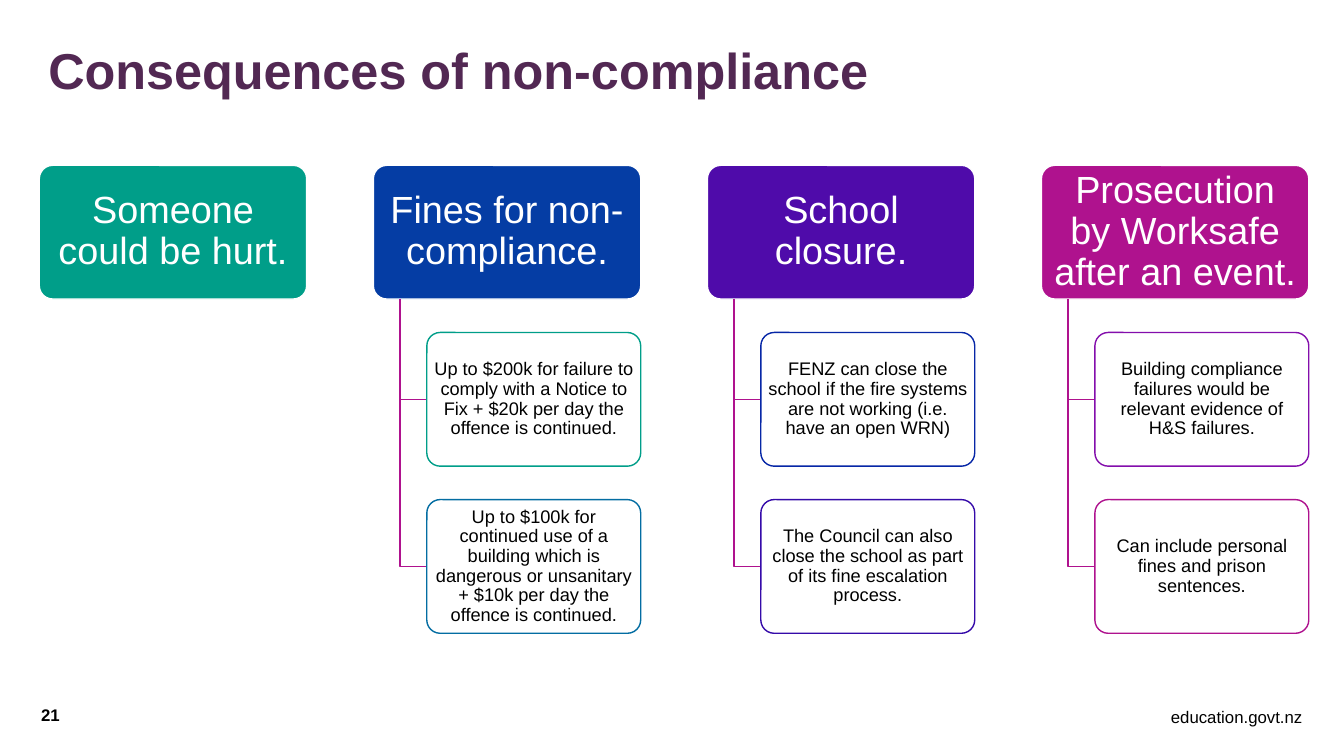
"""Build the slide on the consequences of non-compliance."""
from lxml.etree import SubElement
from pptx import Presentation
from pptx.dml.color import RGBColor
from pptx.enum.shapes import MSO_SHAPE
from pptx.enum.text import MSO_ANCHOR, PP_ALIGN
from pptx.oxml.ns import qn
from pptx.util import Pt

TITLE = "Consequences of non-compliance"
NUMBER = "21"
SITE = "education.govt.nz"
GROUPS = [
    ("Someone could be hurt.", "009E89", []),
    ("Fines for non-compliance.", "053DA4", [
        ("Up to $200k for failure to comply with a Notice to Fix + $20k per day "
         "the offence is continued.", "009E89"),
        ("Up to $100k for continued use of a building which is dangerous or "
         "unsanitary + $10k per day the offence is continued.", "036DA2"),
    ]),
    ("School closure.", "4F0BAA", [
        ("FENZ can close the school if the fire systems are not working "
         "(i.e. have an open WRN)", "0626A6"),
        ("The Council can also close the school as part of its fine escalation "
         "process.", "350AA9"),
    ]),
    ("Prosecution by Worksafe after an event.", "AF128E", [
        ("Building compliance failures would be relevant evidence of H&S "
         "failures.", "830EAC"),
        ("Can include personal fines and prison sentences.", "AF128E"),
    ]),
]
THEME = {
    "font": "Arial", "title": "522853", "ink": "000000", "paper": "FFFFFF",
    "branch": "AF128E", "title_size": 36, "head_size": 27, "item_size": 13,
    "foot_size": 12,
}
LEFT, TOP, PITCH = 28.1, 118.1, 238.6
WIDE, HIGH = 191, 95.5
INDENT, TRUNK, STEP = WIDE / 5, WIDE / 10, HIGH * 1.25


def write(shape, text, size, color, align, bold=False, gap=0.9):
    frame = shape.text_frame
    frame.text = text
    frame.word_wrap = True
    frame.vertical_anchor = MSO_ANCHOR.MIDDLE
    line = frame.paragraphs[0]
    line.alignment, line.line_spacing = align, gap
    font = line.runs[0].font
    font.name, font.size, font.bold = THEME["font"], Pt(size), bold
    font.color.rgb = RGBColor.from_string(color)


def label(slide, box, *style, **more):
    write(slide.shapes.add_textbox(*map(Pt, box)), *style, **more)


def card(slide, x, y, wide, text, fill, edge, size, color, pad):
    shape = slide.shapes.add_shape(
        MSO_SHAPE.ROUNDED_RECTANGLE, Pt(x), Pt(y), Pt(wide), Pt(HIGH))
    shape.adjustments[0] = 0.1
    shape.shadow.inherit = False
    shape.fill.solid()
    shape.fill.fore_color.rgb = RGBColor.from_string(fill)
    shape.line.color.rgb = RGBColor.from_string(edge)
    shape.line.width = Pt(1)
    frame = shape.text_frame
    frame.margin_left = frame.margin_right = Pt(pad * 1.5)
    frame.margin_top = frame.margin_bottom = Pt(pad)
    write(shape, text, size, color, PP_ALIGN.CENTER)
    return shape


def branch(slide, x, y, end_x, end_y):
    path = slide.shapes.build_freeform(Pt(x), Pt(y))
    path.add_line_segments(
        [(Pt(x), Pt(end_y)), (Pt(end_x), Pt(end_y))], close=False)
    shape = path.convert_to_shape()
    shape.shadow.inherit = False
    shape.fill.background()
    shape.line.color.rgb = RGBColor.from_string(THEME["branch"])
    shape.line.width = Pt(1)


def main():
    deck = Presentation()
    deck.slide_width, deck.slide_height = Pt(960), Pt(540)
    slide = deck.slides.add_slide(deck.slide_layouts[6])
    ink, foot = THEME["ink"], THEME["foot_size"]
    label(slide, (719.3, 501.1, 218.2, 21.6), SITE, foot, ink,
          PP_ALIGN.RIGHT, gap=1.0)
    label(slide, (27.4, 23.8, 792.7, 56.2), TITLE, THEME["title_size"],
          THEME["title"], PP_ALIGN.LEFT, bold=True)
    label(slide, (22.3, 504, 82.8, 14.4), NUMBER, foot, ink,
          PP_ALIGN.LEFT, bold=True)
    for col, (head, fill, items) in enumerate(GROUPS):
        x = LEFT + col * PITCH
        card(slide, x, TOP, WIDE, head, fill, THEME["paper"],
             THEME["head_size"], THEME["paper"], 2.9)
        for row, (text, edge) in enumerate(items, 1):
            y = TOP + row * STEP
            branch(slide, x + TRUNK, TOP + HIGH, x + INDENT, y + HIGH / 2)
            item = card(slide, x + INDENT, y, WIDE - INDENT, text,
                        THEME["paper"], edge, THEME["item_size"], ink, 1.4)
            tint = item.fill._xPr.find(qn("a:solidFill"))[0]
            SubElement(tint, qn("a:alpha"), val="90000")
    deck.save("out.pptx")


if __name__ == "__main__":
    main()
